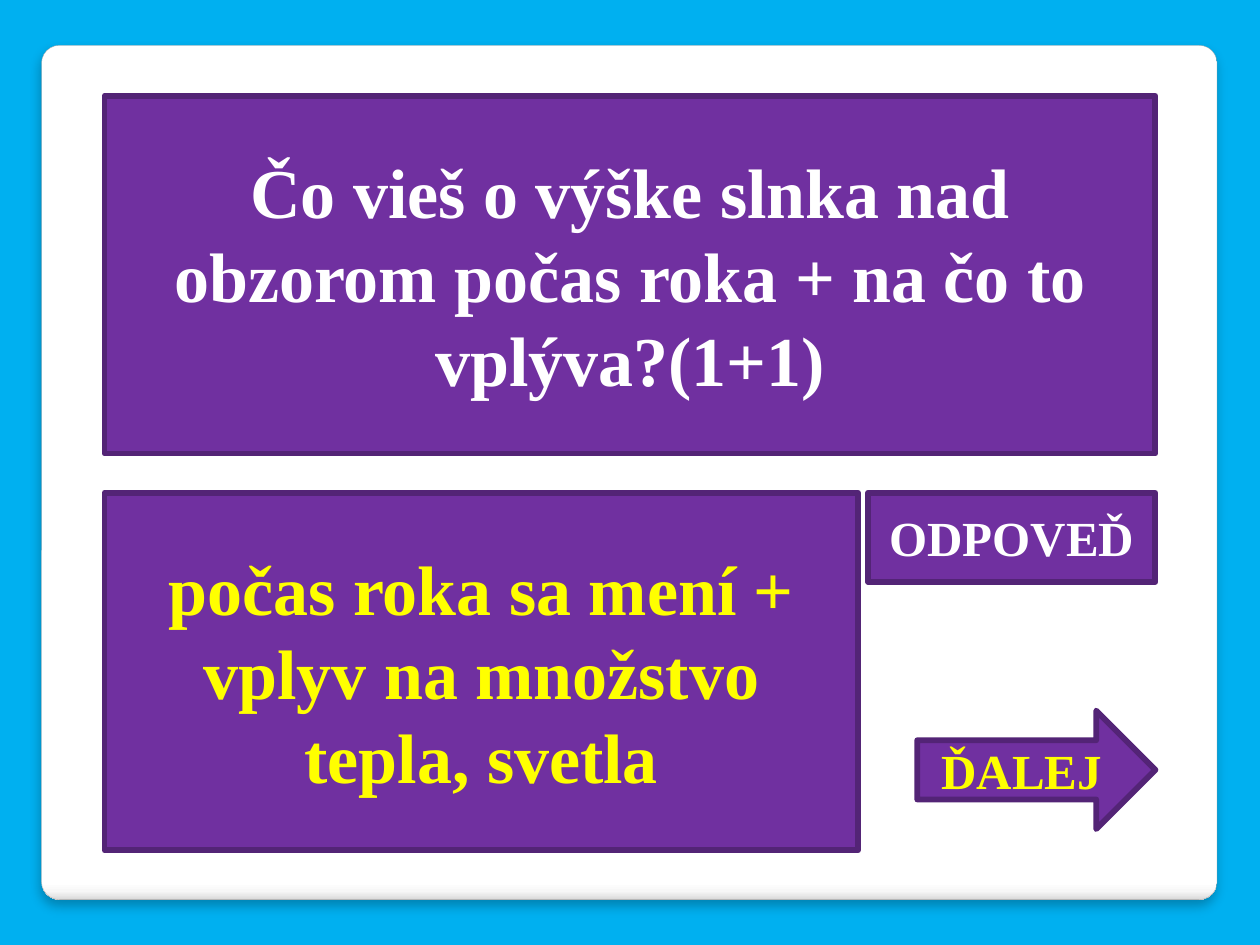
import pptx
import pptx.util
import pptx.oxml
import pptx.oxml.ns
import pptx.dml.color
import pptx.enum.shapes
import pptx.enum.text

KIND = pptx.enum.shapes.MSO_SHAPE
WIDE, HIGH = 10, 7.5
LEFT, RIGHT = 0.83, 9.17
TOP, LOW = 0.76, 3.91
TALL = 2.84
SKY, FILL, EDGE = "00B0F0", "7030A0", "532476"
WHITE, GOLD = "FFFFFF", "FFFF00"
STOPS = [(0, WHITE), (98, WHITE), (99, "F7F7F7"), (100, "DADADA")]
ASK = "Čo vieš o výške slnka nad obzorom počas roka + na čo to vplýva?(1+1)"
BOXES = [
    ("počas roka sa mení + vplyv na množstvo tepla, svetla",
     KIND.RECTANGLE, (LEFT, LOW, 5.98, TALL), 40, GOLD),
    ("ODPOVEĎ", KIND.RECTANGLE, (RIGHT - 2.28, LOW, 2.28, 0.71), 28, WHITE),
    ("ĎALEJ", KIND.RIGHT_ARROW, (RIGHT - 1.89, 5.64, 1.89, 0.94), 28, GOLD),
]


def tint(code):
    return pptx.dml.color.RGBColor.from_string(code)


def node(tag, inner="", **attrs):
    pairs = "".join(f' {key}="{val}"' for key, val in attrs.items())
    space = pptx.oxml.ns.nsdecls("a")
    return pptx.oxml.parse_xml(f"<a:{tag} {space}{pairs}>{inner}</a:{tag}>")


def place(shape, spot):
    shape.left, shape.top, shape.width, shape.height = map(pptx.util.Inches, spot)


def write(shape, text, size=40, color=WHITE, font="Times New Roman", bold=True):
    frame = shape.text_frame
    frame.word_wrap = True
    frame.auto_size = pptx.enum.text.MSO_AUTO_SIZE.NONE
    frame.vertical_anchor = pptx.enum.text.MSO_ANCHOR.MIDDLE
    para = frame.paragraphs[0]
    para.alignment = pptx.enum.text.PP_ALIGN.CENTER
    run = para.add_run()
    run.text = text
    run.font.size = pptx.util.Pt(size)
    run.font.name = font
    run.font.bold = bold
    run.font.color.rgb = tint(color)


def paint(shape):
    shape.fill.solid()
    shape.fill.fore_color.rgb = tint(FILL)
    shape.line.color.rgb = tint(EDGE)
    shape.line.width = pptx.util.Pt(3.35)
    shape.line._get_or_add_ln().append(node("round"))


def panel(slide):
    card = slide.shapes.add_shape(KIND.ROUNDED_RECTANGLE, 0, 0, 0, 0)
    place(card, (0.33, 0.36, 9.33, 6.78))
    card.adjustments[0] = 0.021
    card.fill.gradient()
    card.fill.gradient_angle = 270
    stops = card.fill._fill._gradFill.find(pptx.oxml.ns.qn("a:gsLst"))
    for old in list(stops):
        stops.remove(old)
    for share, code in STOPS:
        stops.append(node("gs", f'<a:srgbClr val="{code}"/>', pos=share * 1000))
    card.line.color.rgb = tint("A4A4A4")
    card.line.width = pptx.util.Pt(0.16)
    card.shadow.inherit = False
    shade = '<a:srgbClr val="000000"><a:alpha val="25000"/></a:srgbClr>'
    effects = card._element.spPr.find(pptx.oxml.ns.qn("a:effectLst"))
    effects.append(node("outerShdw", shade, blurRad=pptx.util.Pt(6),
                        dist=pptx.util.Pt(4), dir=90 * 60000, rotWithShape=0))
    slide.shapes._spTree.insert(2, card._element)


def main():
    deck = pptx.Presentation()
    deck.slide_width = pptx.util.Inches(WIDE)
    deck.slide_height = pptx.util.Inches(HIGH)
    slide = deck.slides.add_slide(deck.slide_layouts[5])
    slide.background.fill.solid()
    slide.background.fill.fore_color.rgb = tint(SKY)
    panel(slide)
    title = slide.shapes.title
    place(title, (LEFT, TOP, RIGHT - LEFT, TALL))
    paint(title)
    write(title, ASK)
    for text, kind, spot, size, color in BOXES:
        box = slide.shapes.add_shape(kind, 0, 0, 0, 0)
        place(box, spot)
        paint(box)
        box.shadow.inherit = False
        write(box, text, size=size, color=color)
    deck.save("out.pptx")


if __name__ == "__main__":
    main()
